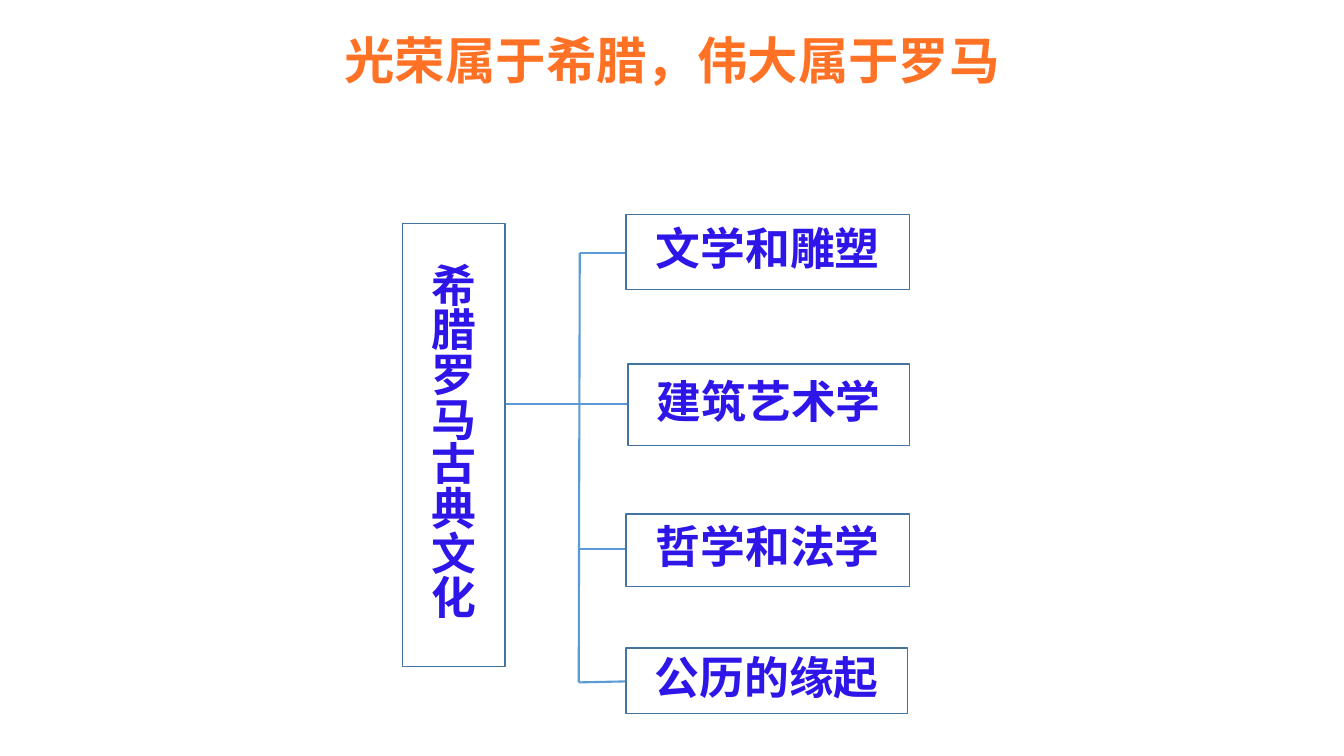
from lxml import etree
from pptx import Presentation, util as u
from pptx.dml.color import RGBColor
from pptx.enum import shapes, text
from pptx.oxml import parse_xml
from pptx.oxml.ns import qn

FONT = "Noto Sans CJK SC"
NS = "http://schemas.openxmlformats.org/drawingml/2006/main"


def rgb(code):
    return RGBColor.from_string(code)


def write(shape, words, size, color, gap):
    """Fill a shape with one bold, centred paragraph."""
    frame = shape.text_frame
    frame.text = words
    para = frame.paragraphs[0]
    para.alignment = text.PP_ALIGN.CENTER
    para.line_spacing = gap
    run = para.runs[0]
    run.font.size = u.Pt(size)
    run.font.bold = True
    run.font.name = FONT
    run.font.color.rgb = rgb(color)
    etree.SubElement(run.font._element, qn("a:ea")).set("typeface", FONT)
    return run


deck = Presentation()
deck.slide_width, deck.slide_height = u.Inches(13.33), u.Inches(7.5)
slide = deck.slides.add_slide(deck.slide_layouts[6])

# Title
title = slide.shapes.add_textbox(*map(u.Inches, (0.99, 0.31, 11.35, 1.26)))
run = write(title, "光荣属于希腊，伟大属于罗马", 36, "FF7124", 0.9)
run.font._element.insert(0, parse_xml(
    f'<a:ln xmlns:a="{NS}" w="9525"><a:solidFill>'
    '<a:srgbClr val="FFFF99"/></a:solidFill></a:ln>'))

# Bracket: root line, trunk, then one branch for each outer topic
trunk, edge = 5.74, 6.21
lines = [
    (5, 4.01, 6.23, 4.01),
    (5.75, 2.51, trunk, 6.77),
    (5.75, 2.51, edge, 2.51),
    (trunk, 5.45, edge, 5.45),
    (trunk, 6.77, edge, 6.76),
]
for ends in lines:
    line = slide.shapes.add_connector(
        shapes.MSO_CONNECTOR.STRAIGHT, *map(u.Inches, ends))
    line.line.color.rgb = rgb("5B9BD5")
    line.line.width = u.Pt(1.5)
    etree.SubElement(line._element.spPr, qn("a:effectLst"))

# Root and topics
boxes = [
    ("希腊罗马古典文化", 3.99, 2.22, 1.02, 4.39),
    ("文学和雕塑", edge, 2.13, 2.81, 0.74),
    ("建筑艺术学", 6.23, 3.61, 2.79, 0.81),
    ("哲学和法学", edge, 5.1, 2.81, 0.72),
    ("公历的缘起", edge, 6.43, 2.79, 0.65),
]
for words, *place in boxes:
    box = slide.shapes.add_shape(
        shapes.MSO_SHAPE.FLOWCHART_PROCESS, *map(u.Inches, place))
    box.shadow.inherit = False
    box.fill.solid()
    box.fill.fore_color.rgb = rgb("FFFFFF")
    box.line.color.rgb = rgb("43739E")
    box.line.width = u.Pt(1)
    box.text_frame.vertical_anchor = text.MSO_ANCHOR.MIDDLE
    write(box, words, 32, "2E16E8", 0.83)

deck.save("out.pptx")
